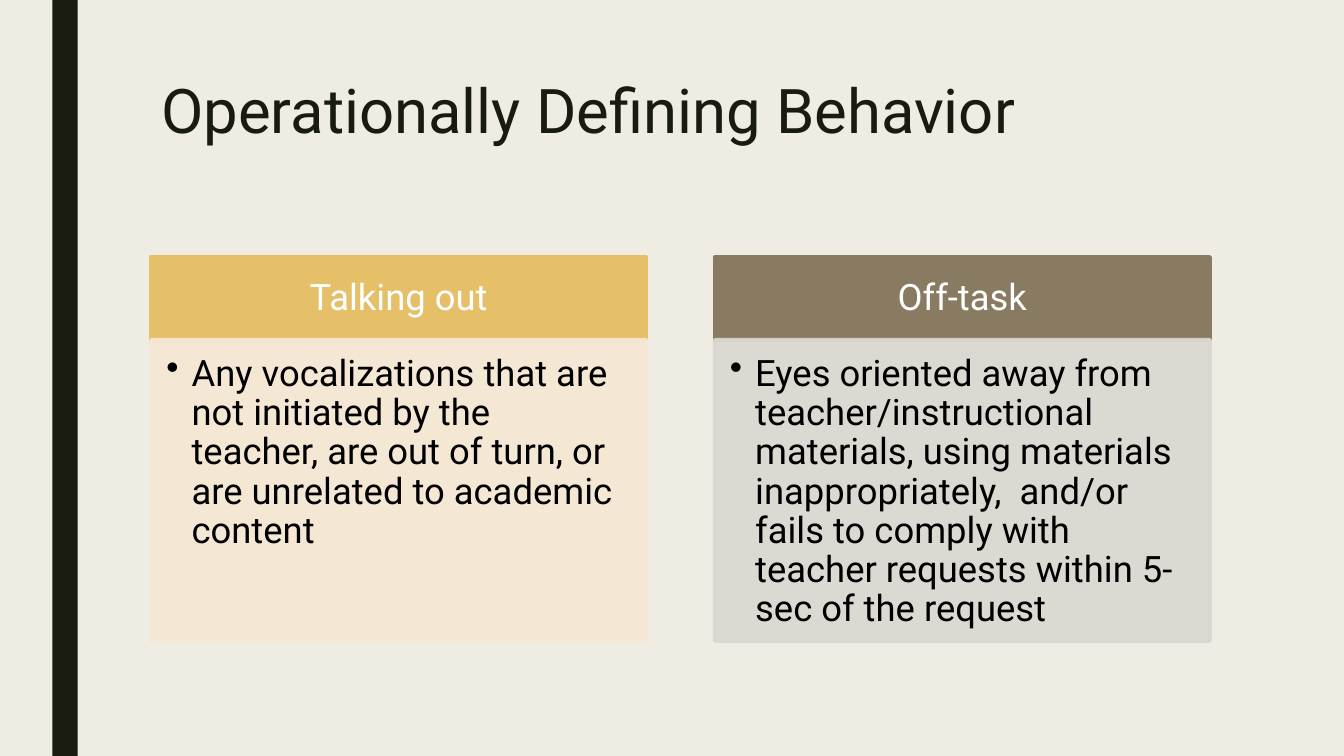
from lxml import etree
from pptx import Presentation
from pptx import util as u
from pptx.dml.color import RGBColor
from pptx.enum import shapes, text
from pptx.oxml.ns import qn

COLORS = {
    "background": "EFEDE3", "ink": "191B0E", "white": "FFFFFF", "black": "000000",
    "gold": "E6C069", "cream": "F5E8D4", "brown": "897B61", "stone": "DAD7D2",
}
BEHAVIORS = [
    ("Talking out", "gold", "cream",
     "Any vocalizations that are not initiated by the teacher, are out of turn, "
     "or are unrelated to academic content"),
    ("Off-task", "brown", "stone",
     "Eyes oriented away from teacher/instructional materials, using materials "
     "inappropriately,  and/or fails to comply with teacher requests within 5-sec "
     "of the request"),
]
LEFT, COLUMN_WIDTH, COLUMN_STEP = 1.5, 4.91, 5.59
HEADING_TOP, HEADING_HEIGHT, DEFINITION_HEIGHT = 2.55, 0.82, 2.99


class BehaviorSlide:
    """Holds the slide and its style, and draws each kind of element."""

    font = "Roboto"

    def __init__(self, deck):
        self.slide = deck.slides.add_slide(deck.slide_layouts[5])
        fill = self.slide.background.fill
        fill.solid()
        fill.fore_color.rgb = self.color("background")

    def color(self, name):
        return RGBColor.from_string(COLORS[name])

    def set_wording(self, shape, wording, size, color, align, anchor, insets, spacing=0.9):
        frame = shape.text_frame
        frame.text = wording
        frame.word_wrap = True
        frame.auto_size = text.MSO_AUTO_SIZE.NONE
        frame.vertical_anchor = anchor
        (frame.margin_left, frame.margin_top,
         frame.margin_right, frame.margin_bottom) = map(u.Inches, insets)
        paragraph = frame.paragraphs[0]
        paragraph.alignment = align
        paragraph.line_spacing = spacing
        font = paragraph.runs[0].font
        font.name, font.size = self.font, u.Pt(size)
        font.color.rgb = self.color(color)
        return paragraph

    def title(self, wording):
        heading = self.slide.shapes.title
        heading.left, heading.top = u.Inches(LEFT), u.Inches(0.75)
        heading.width, heading.height = u.Inches(10.5), u.Inches(1.62)
        self.set_wording(heading, wording, 44, "ink", text.PP_ALIGN.LEFT,
                         text.MSO_ANCHOR.TOP, (0.1, 0.05, 0.1, 0.05), 0.89)

    def block(self, left, top, width, height, color, outlined=True, opacity=None):
        block = self.slide.shapes.add_shape(
            shapes.MSO_SHAPE.RECTANGLE, *map(u.Inches, (left, top, width, height)))
        block.shadow.inherit = False
        block.fill.solid()
        block.fill.fore_color.rgb = self.color(color)
        if outlined:
            block.line.color.rgb = self.color(color)
            block.line.width = u.Pt(2.75)
        else:
            block.line.fill.background()
        if opacity:
            for tint in block._element.spPr.iter(qn("a:srgbClr")):
                etree.SubElement(tint, qn("a:alpha"), val=str(opacity * 1000))
        return block

    def heading(self, left, wording, color):
        block = self.block(left, HEADING_TOP, COLUMN_WIDTH, HEADING_HEIGHT, color)
        self.set_wording(block, wording, 26, "white", text.PP_ALIGN.CENTER,
                         text.MSO_ANCHOR.MIDDLE, (0.2, 0.12, 0.2, 0.12))

    def definition(self, left, wording, color):
        block = self.block(left, HEADING_TOP + HEADING_HEIGHT, COLUMN_WIDTH,
                           DEFINITION_HEIGHT, color, opacity=90)
        paragraph = self.set_wording(block, wording, 26, "black", text.PP_ALIGN.LEFT,
                                     text.MSO_ANCHOR.TOP, (0.15, 0.15, 0.2, 0.23))
        paragraph.level = 1
        properties = paragraph._p.get_or_add_pPr()
        properties.set("marL", str(u.Inches(0.25)))
        properties.set("indent", str(u.Inches(-0.25)))
        etree.SubElement(properties, qn("a:buChar"), char="•")


def main():
    deck = Presentation()
    deck.slide_width, deck.slide_height = u.Inches(13.33), u.Inches(7.5)
    page = BehaviorSlide(deck)
    page.block(0.52, 0, 0.25, 7.5, "ink", outlined=False)
    page.title("Operationally Defining Behavior")
    for column, (name, strong, pale, meaning) in enumerate(BEHAVIORS):
        left = LEFT + column * COLUMN_STEP
        page.heading(left, name, strong)
        page.definition(left, meaning, pale)
    deck.save("out.pptx")


if __name__ == "__main__":
    main()
